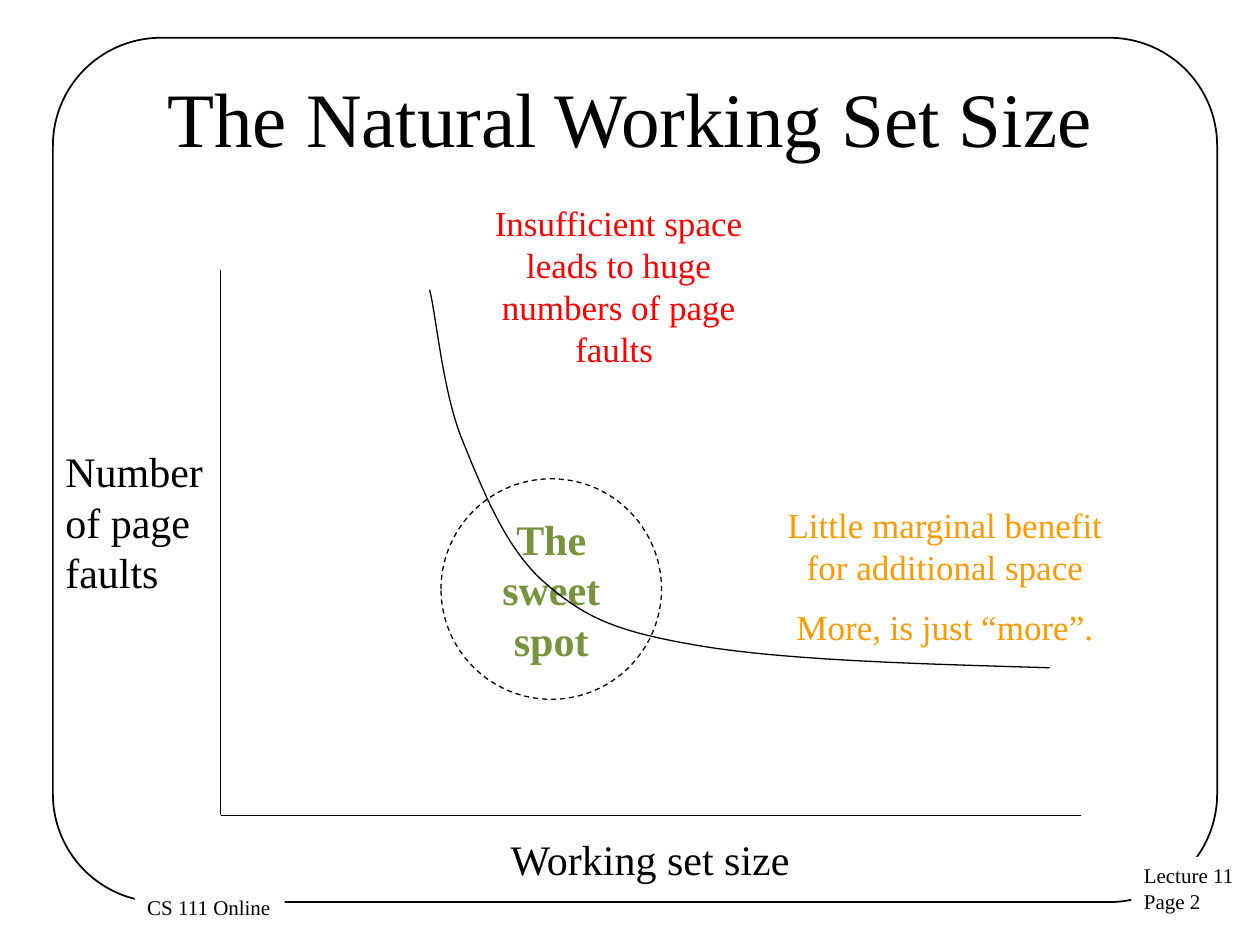
import pptx
import pptx.util
import pptx.dml.color
import pptx.enum.dml
import pptx.enum.shapes
import pptx.enum.text
import pptx.oxml.ns
from lxml import etree

Inches, Pt = pptx.util.Inches, pptx.util.Pt
SHAPE = pptx.enum.shapes.MSO_SHAPE
ALIGN = pptx.enum.text.PP_ALIGN
ANCHOR = pptx.enum.text.MSO_ANCHOR
FIT = pptx.enum.text.MSO_AUTO_SIZE

COLORS = {"ink": "000000", "paper": "FFFFFF", "green": "77933C",
          "red": "FF0000", "orange": "FF9900"}
FONT = "Times New Roman"


def color(name):
    return pptx.dml.color.RGBColor.from_string(COLORS[name])


def write(frame, text, size=24, ink="ink", bold=False, center=False,
          middle=False, wrap=True, grow=True, gap=0):
    """Fill a text frame, one paragraph per line of text, gap points apart."""
    frame.word_wrap = wrap
    frame.auto_size = FIT.SHAPE_TO_FIT_TEXT if grow else FIT.NONE
    frame.vertical_anchor = ANCHOR.MIDDLE if middle else ANCHOR.TOP
    for i, line in enumerate(text.split("\n")):
        para = frame.add_paragraph() if i else frame.paragraphs[0]
        para.alignment = ALIGN.CENTER if center else ALIGN.LEFT
        para.space_before = Pt(gap if i else 0)
        run = para.add_run()
        run.text = line
        run.font.name = FONT
        run.font.size = Pt(size)
        run.font.bold = bold
        run.font.color.rgb = color(ink)


def bezier(start, curves, steps=24):
    """Points along a chain of cubic curves, each given as three points."""
    points = [start]
    for a, b, end in curves:
        for i in range(1, steps + 1):
            t = i / steps
            u = 1 - t
            points.append(tuple(
                u**3 * p + 3 * u * u * t * q + 3 * u * t * t * r + t**3 * s
                for p, q, r, s in zip(start, a, b, end)))
        start = end
    return points


class Canvas:
    def __init__(self, slide):
        self.slide = slide
        self.shapes = slide.shapes

    def title(self, text, box):
        shape = self.shapes.title
        shape.left, shape.top, shape.width, shape.height = map(Inches, box)
        write(shape.text_frame, text, size=44, center=True, middle=True, grow=False)

    def stroke(self, line, width, dash=False):
        line.color.rgb = color("ink")
        line.width = Pt(width)
        if dash:
            line.dash_style = pptx.enum.dml.MSO_LINE.DASH

    def shape(self, kind, box, fill=None, width=0, dash=False):
        shape = self.shapes.add_shape(kind, *map(Inches, box))
        shape.shadow.inherit = False
        if fill:
            shape.fill.solid()
            shape.fill.fore_color.rgb = color(fill)
        else:
            shape.fill.background()
        if width:
            self.stroke(shape.line, width, dash)
        else:
            shape.line.fill.background()
        return shape

    def label(self, text, box):
        """Small text on a white patch that interrupts the frame."""
        shape = self.shape(SHAPE.RECTANGLE, box, fill="paper")
        write(shape.text_frame, text, size=12, wrap=False)

    def text(self, text, box, **style):
        shape = self.shapes.add_textbox(*map(Inches, box))
        write(shape.text_frame, text, **style)

    def line(self, start, end):
        line = self.shapes.add_connector(
            pptx.enum.shapes.MSO_CONNECTOR.STRAIGHT, *map(Inches, start + end))
        self.stroke(line.line, 0.75)
        etree.SubElement(line._element.spPr, pptx.oxml.ns.qn("a:effectLst"))

    def curve(self, points):
        start, *rest = [(Inches(x), Inches(y)) for x, y in points]
        pen = self.shapes.build_freeform(*start)
        pen.add_line_segments(rest, close=False)
        shape = pen.convert_to_shape()
        shape.shadow.inherit = False
        shape.fill.background()
        self.stroke(shape.line, 0.75)


def main():
    deck = pptx.Presentation()
    deck.slide_width, deck.slide_height = Inches(10), Inches(7.5)
    page = Canvas(deck.slides.add_slide(deck.slide_layouts[5]))

    frame = page.shape(SHAPE.ROUNDED_RECTANGLE, (0.42, 0.3, 9.24, 6.86), width=1)
    frame.adjustments[0] = 0.125
    page.label("Lecture 11\nPage 2", (8.98, 6.8, 0.92, 0.51))
    page.label("CS 111 Online", (1.07, 7.05, 1.19, 0.3))
    page.title("The Natural Working Set Size", (0.5, 0.3, 9, 1.25))

    corner = (1.75, 6.47)
    page.line((1.75, 2.14), corner)
    page.line(corner, (8.58, 6.47))
    page.text("Number of page faults", (0.42, 3.49, 1.51, 1.31))
    page.text("Working set size", (3.66, 6.57, 3, 0.5), center=True)

    spot = page.shape(SHAPE.OVAL, (3.5, 3.8, 1.75, 1.75), width=0.75, dash=True)
    write(spot.text_frame, "The\nsweet\nspot", ink="green", bold=True,
          center=True, middle=True, wrap=False, grow=False)

    page.text("Insufficient space leads to huge numbers of page faults ",
              (3.66, 1.55, 2.5, 1.45), size=20, ink="red", center=True)
    page.text("Little marginal benefit for additional space\nMore, is just “more”.",
              (6.12, 3.95, 2.76, 1.28), size=20, ink="orange", center=True, gap=10)

    page.curve(bezier((8.33, 5.3), [
        ((7.29, 5.27), (6.25, 5.24), (5.58, 5.13)),
        ((4.91, 5.02), (4.65, 4.91), (4.33, 4.63)),
        ((4.01, 4.36), (3.82, 3.86), (3.66, 3.47)),
        ((3.51, 3.08), (3.46, 2.49), (3.41, 2.3)),
    ]))
    deck.save("out.pptx")


if __name__ == "__main__":
    main()
